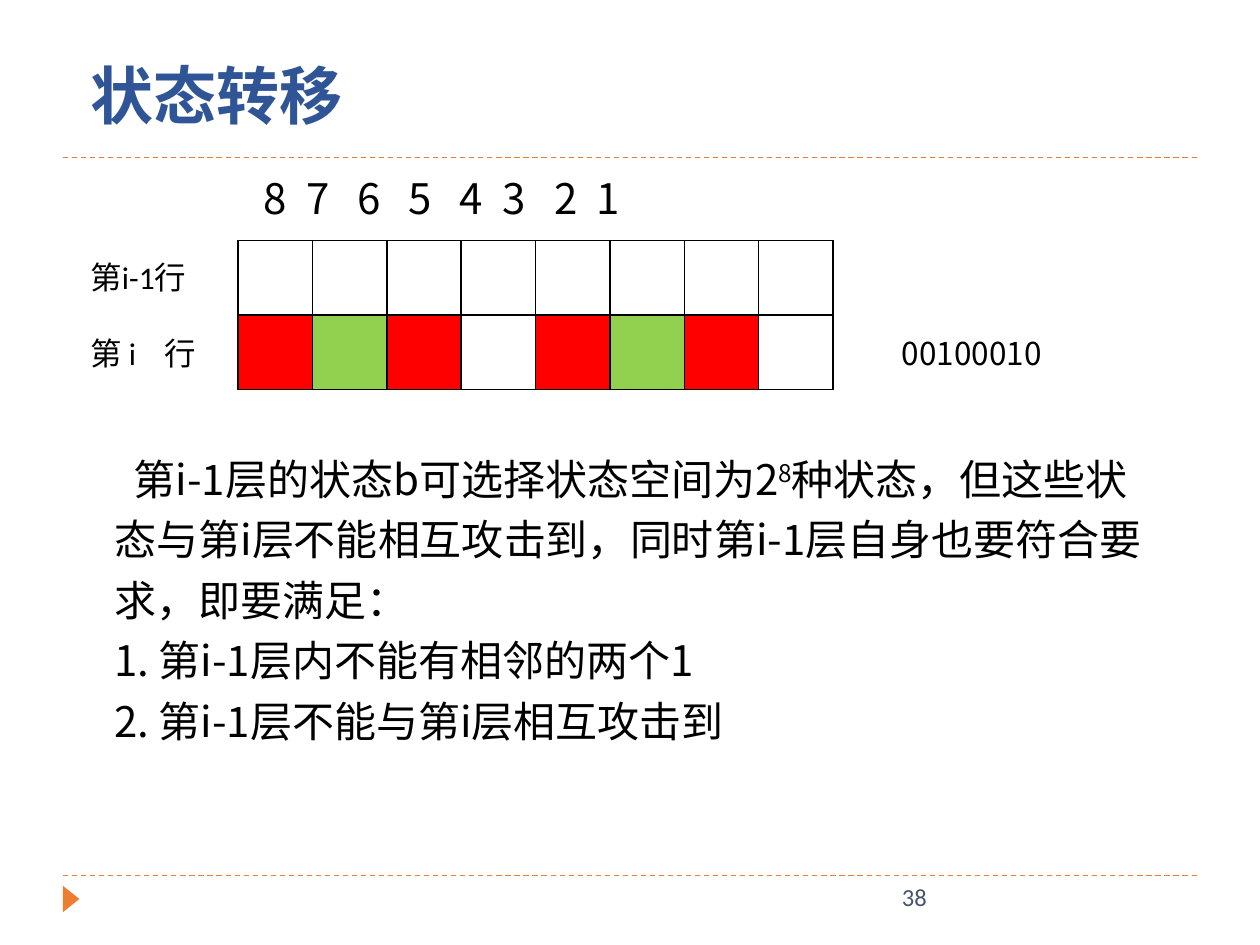
from itertools import accumulate
from lxml import etree
from pptx import Presentation
from pptx.dml.color import RGBColor
from pptx.enum import dml, shapes
from pptx.oxml import ns
from pptx.util import Pt

HUES = {"ink": "000000", "head": "2F5597", "rule": "ED7D31", "page": "44546A",
        "W": "FFFFFF", "R": "FF0000", "G": "92D050"}
LATIN, HAN = "Calibri", "Noto Sans CJK SC"

ROWS = ["WWWWWWWW", "RGRWRGRW"]
CELL = 42.5
RULES = [500.4, 90]
DIGITS = "87654321"
GAPS = [24.5, 29.3, 29.3, 29.3, 24.5, 29.3, 24.5]
BODY = [
    ["第i-1层的状态b可选择状态空间为2", "^8",
     "种状态，但这些状态与第i层不能相互攻击到，同时第i-1层自身也要符合要求，即要满足："],
    ["1. 第i-1层内不能有相邻的两个1"],
    ["2. 第i-1层不能与第i层相互攻击到"],
]
NOTES = [
    (["38"], (508.3, 500.4, 162, 29), dict(size=14, hue="page")),
    (["状态转移"], (44.6, 28.8, 158.4, 51), dict(size=36, hue="head", bold=True, wrap=False)),
    (["\t".join(DIGITS)], (143.3, 95, 351.4, 36), dict(size=24, font=HAN, tabs=list(accumulate(GAPS)))),
    (["第i-1行"], (44.6, 144, 75.6, 29), {}),
    (["第 i\t行"], (44.6, 187.2, 75.6, 29), dict(tabs=[42.5])),
    (BODY, (58.3, 249.8, 603.4, 181.4), dict(size=24, font=HAN, space=1.2, indent=11)),
    (["00100010"], (508.3, 187.2, 128.9, 29), dict(font=HAN)),
]


def color(name):
    return RGBColor.from_string(HUES[name])


def add(root, tag, **kw):
    return etree.SubElement(root, ns.qn("a:" + tag), **kw)


def write(paras, box, size=18, font=LATIN, hue="ink", bold=False, wrap=True,
          space=None, indent=0, tabs=()):
    frame = slide.shapes.add_textbox(*map(Pt, box)).text_frame
    frame.word_wrap = wrap
    for n, parts in enumerate(paras):
        para = frame.add_paragraph() if n else frame.paragraphs[0]
        if space:
            para.line_spacing = space
        props = para._p.get_or_add_pPr()
        if indent and not n:
            props.set("indent", str(Pt(indent)))
        if tabs:
            stops = add(props, "tabLst")
            for stop in tabs:
                add(stops, "tab", pos=str(Pt(stop)), algn="l")
        for part in [parts] if isinstance(parts, str) else parts:
            run = para.add_run()
            run.text = part.lstrip("^")
            run.font.size, run.font.name, run.font.bold = Pt(size), font, bold
            run.font.color.rgb = color(hue)
            add(run._r.get_or_add_rPr(), "ea", typeface=HAN)
            if part.startswith("^"):
                run._r.get_or_add_rPr().set("baseline", "30000")


def rule(y):
    line = slide.shapes.add_connector(
        shapes.MSO_CONNECTOR.STRAIGHT, Pt(36), Pt(y), Pt(684), Pt(y))
    line.line.color.rgb = color("rule")
    line.line.width = Pt(0.75)
    line.line.dash_style = dml.MSO_LINE.DASH
    add(line._element.spPr, "effectLst")


def marker():
    mark = slide.shapes.add_shape(
        shapes.MSO_SHAPE.ISOSCELES_TRIANGLE, Pt(33.1), Pt(509), Pt(15.1), Pt(9.4))
    mark.rotation = 90
    mark.shadow.inherit = False
    mark.fill.solid()
    mark.fill.fore_color.rgb = color("rule")
    mark.line.fill.background()


def board():
    count = len(ROWS[0])
    table = slide.shapes.add_table(
        len(ROWS), count, Pt(136.1), Pt(137.5),
        Pt(CELL * count), Pt(CELL * len(ROWS))).table
    table.first_row = table.horz_banding = False
    for col in table.columns:
        col.width = Pt(CELL)
    for r, row in enumerate(ROWS):
        table.rows[r].height = Pt(CELL)
        for c, key in enumerate(row):
            cell = table.cell(r, c)
            props = cell._tc.get_or_add_tcPr()
            for side in "LRTB":
                edge = add(props, "ln" + side, w=str(Pt(1)))
                add(add(edge, "solidFill"), "srgbClr", val=HUES["ink"])
            cell.fill.solid()
            cell.fill.fore_color.rgb = color(key)


deck = Presentation()
deck.slide_width, deck.slide_height = Pt(720), Pt(540)
slide = deck.slides.add_slide(deck.slide_layouts[6])
for y in RULES:
    rule(y)
marker()
board()
for paras, box, form in NOTES:
    write(paras, box, **form)
deck.save("out.pptx")
